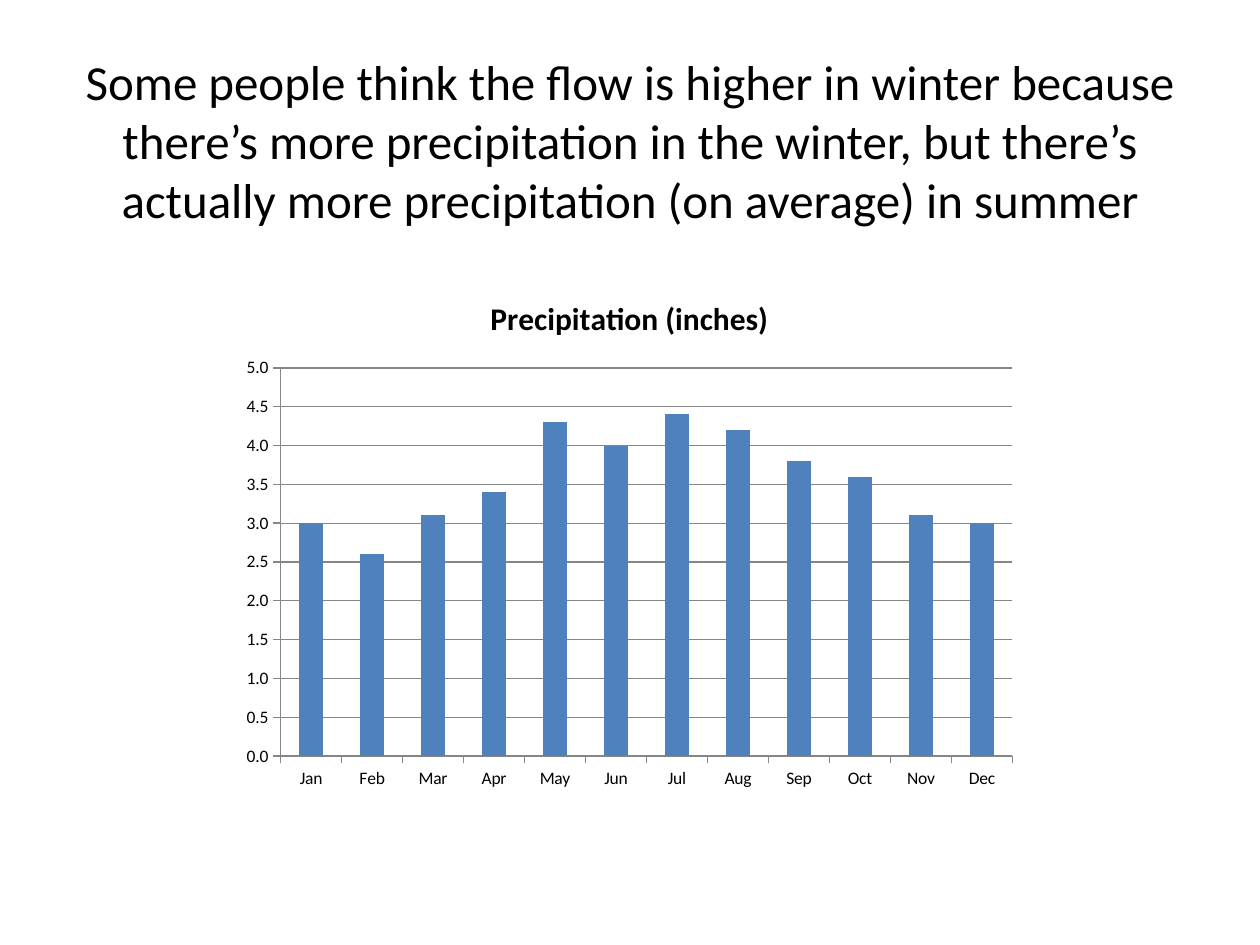
from dataclasses import dataclass

from pptx import Presentation
from pptx import util as u
from pptx.chart.data import CategoryChartData
from pptx.dml.color import RGBColor
from pptx.enum import chart as ch, text

FONT = "Calibri"
BLACK = RGBColor(0x00, 0x00, 0x00)
BLUE = RGBColor(0x4F, 0x81, 0xBD)
GREY = RGBColor(0x86, 0x86, 0x86)

HEADING = (
    "Some people think the flow is higher in winter because there’s more "
    "precipitation in the winter, but there’s actually more precipitation "
    "(on average) in summer"
)
CHART_TITLE = "Precipitation (inches)"
PRECIPITATION = {
    "Jan": 3.0, "Feb": 2.6, "Mar": 3.1, "Apr": 3.4, "May": 4.3, "Jun": 4.0,
    "Jul": 4.4, "Aug": 4.2, "Sep": 3.8, "Oct": 3.6, "Nov": 3.1, "Dec": 3.0,
}


@dataclass(frozen=True)
class Box:
    """A frame on the slide, in centimetres."""
    left: float
    top: float
    width: float
    height: float

    def lengths(self) -> tuple:
        return tuple(map(u.Cm, (self.left, self.top, self.width, self.height)))


def set_font(font, size: int, bold: bool = False) -> None:
    font.name, font.size, font.bold = FONT, u.Pt(size), bold
    font.color.rgb = BLACK


def set_line(line) -> None:
    line.color.rgb = GREY
    line.width = u.Pt(0.75)


def add_heading(s, box: Box) -> None:
    tf = s.shapes.add_textbox(*box.lengths()).text_frame
    tf.word_wrap = True
    tf.vertical_anchor = text.MSO_ANCHOR.MIDDLE
    p = tf.paragraphs[0]
    p.text = HEADING
    p.alignment = text.PP_ALIGN.CENTER
    set_font(p.font, 28)


def add_precipitation_chart(s, box: Box) -> None:
    data = CategoryChartData(number_format="0.0")
    data.categories = PRECIPITATION.keys()
    data.add_series(CHART_TITLE, PRECIPITATION.values())
    chart = s.shapes.add_chart(
        ch.XL_CHART_TYPE.COLUMN_CLUSTERED, *box.lengths(), data).chart
    set_font(chart.font, 10)
    chart.has_legend = False
    chart.has_title = True
    p = chart.chart_title.text_frame.paragraphs[0]
    p.text = CHART_TITLE
    set_font(p.font, 18, bold=True)
    chart.chart_title.include_in_layout = False

    plot = chart.plots[0]
    plot.vary_by_categories = False
    plot.gap_width = 150
    fill = plot.series[0].format.fill
    fill.solid()
    fill.fore_color.rgb = BLUE

    for axis in (chart.category_axis, chart.value_axis):
        axis.major_tick_mark = ch.XL_TICK_MARK.OUTSIDE
        axis.minor_tick_mark = ch.XL_TICK_MARK.NONE
        set_line(axis.format.line)
    values = chart.value_axis
    values.minimum_scale, values.maximum_scale, values.major_unit = 0, 5, 0.5
    values.has_major_gridlines = True
    set_line(values.major_gridlines.format.line)
    values.tick_labels.number_format = "#,##0.0"
    values.tick_labels.number_format_is_linked = False


def main() -> None:
    prs = Presentation()
    prs.slide_width, prs.slide_height = u.Cm(25.4), u.Cm(19.05)
    s = prs.slides.add_slide(prs.slide_layouts[6])
    add_heading(s, Box(1.27, 0.76, 22.86, 4.11))
    add_precipitation_chart(s, Box(4.65, 5.51, 16.08, 10.59))
    prs.save("out.pptx")


if __name__ == "__main__":
    main()
